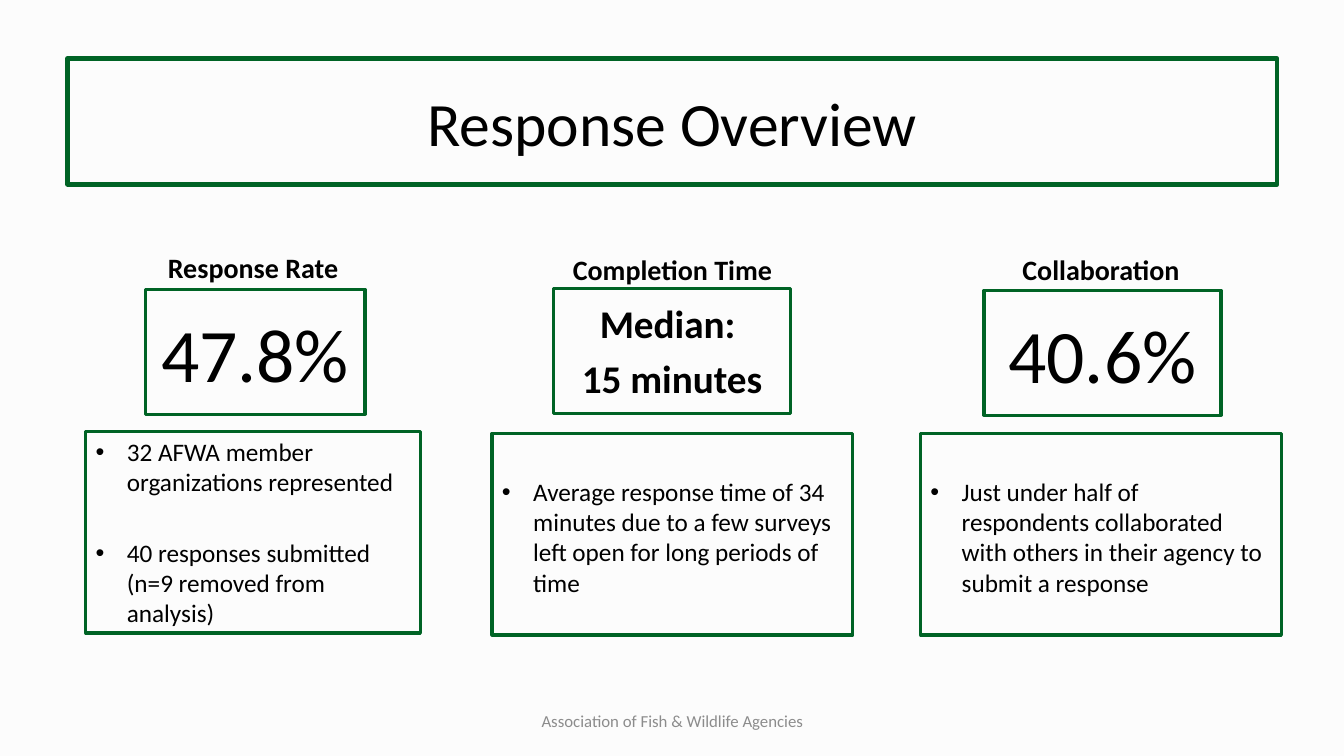
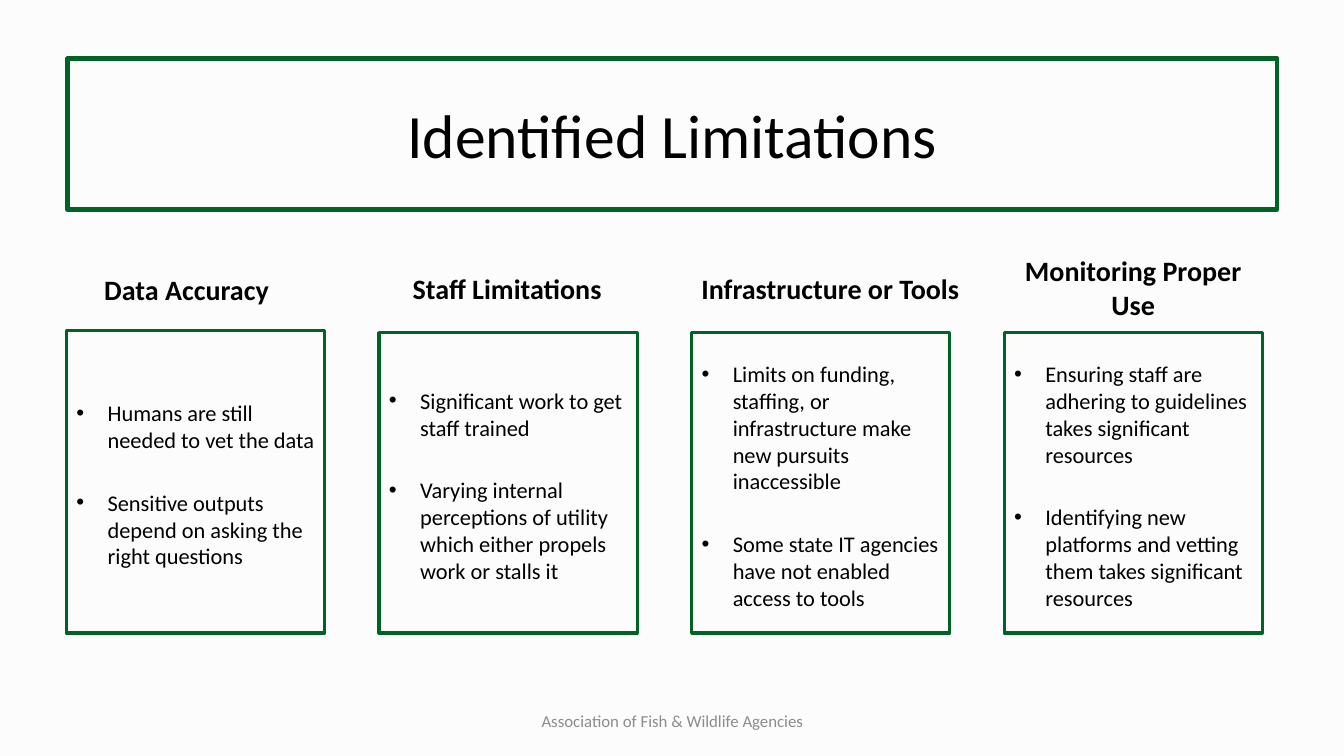
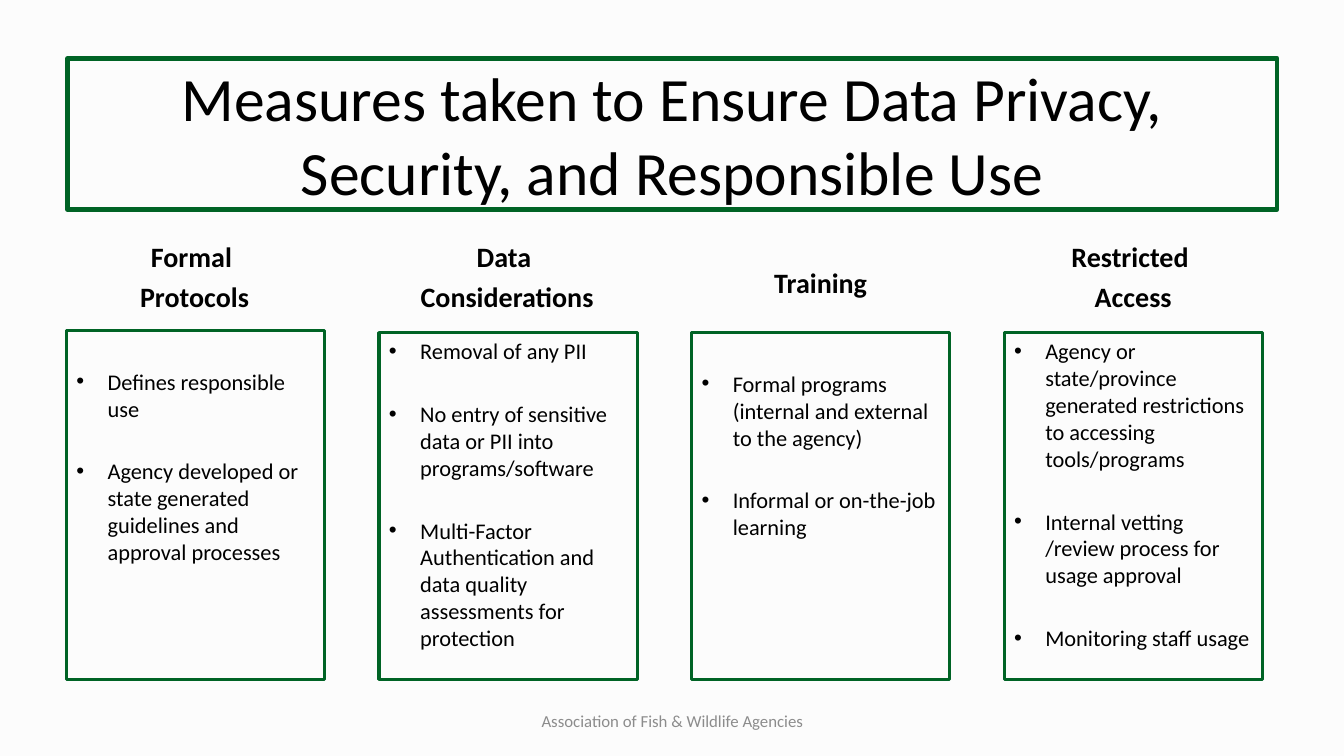
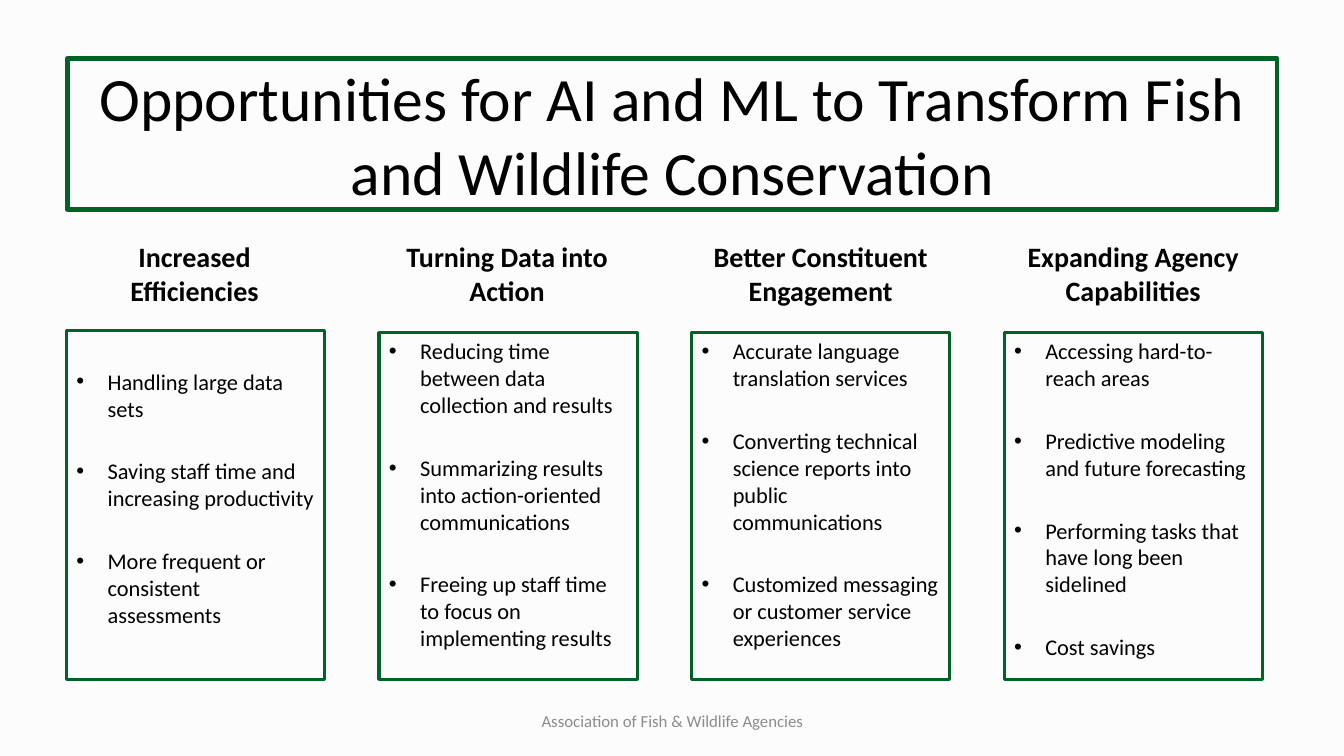
from dataclasses import dataclass

from lxml.etree import SubElement
from pptx import Presentation
from pptx.dml.color import RGBColor
from pptx.enum.shapes import MSO_SHAPE
from pptx.enum.text import MSO_ANCHOR, PP_ALIGN
from pptx.oxml.ns import qn
from pptx.util import Inches, Pt


@dataclass(frozen=True)
class Theme:
    font: str = "Calibri"
    paper: RGBColor = RGBColor(0xFC, 0xFC, 0xFC)
    green: RGBColor = RGBColor(0x00, 0x63, 0x25)
    ink: RGBColor = RGBColor(0, 0, 0)
    grey: RGBColor = RGBColor(0x8C, 0x8C, 0x8C)
    title: int = 44
    figure: int = 54
    median: int = 28
    heading: int = 20
    body_large: int = 18
    body: int = 16
    footer: int = 12


T = Theme()
FOOTER = "Association of Fish & Wildlife Agencies"
INDENT = 0.31
LEAD_IN = 0.37  # top inset that starts a list one line lower


def add_text(s, box, lines, size, color=T.ink, bold=False, border=None, bullets=False,
             anchor=MSO_ANCHOR.MIDDLE, top_inset=0.05):
    """Add a text box, or a green-bordered rectangle when border (points) is given."""
    at = [Inches(v) for v in box]
    if border:
        sp = s.shapes.add_shape(MSO_SHAPE.RECTANGLE, *at)
        sp.shadow.inherit = False
        sp.fill.background()
        sp.line.color.rgb = T.green
        sp.line.width = Pt(border)
    else:
        sp = s.shapes.add_textbox(*at)
    tf = sp.text_frame
    tf.word_wrap = True
    tf.vertical_anchor = anchor
    tf.margin_top = Inches(top_inset)
    for i, line in enumerate(lines):
        p = tf.paragraphs[0] if i == 0 else tf.add_paragraph()
        p.alignment = PP_ALIGN.LEFT if bullets else PP_ALIGN.CENTER
        if i:
            p.space_before = Pt(size * (1.6 if bullets else 0.2))
        if bullets:
            pPr = p._p.get_or_add_pPr()
            pPr.set("marL", str(Inches(INDENT)))
            pPr.set("indent", str(-Inches(INDENT)))
            SubElement(pPr, qn("a:buFont"), typeface="Arial")
            SubElement(pPr, qn("a:buChar"), char="•")
        r = p.add_run()
        r.text = line
        r.font.name = T.font
        r.font.size = Pt(size)
        r.font.bold = bold
        r.font.color.rgb = color


def add_base(prs, title, title_height):
    """Add a slide with the shared background, footer and title band."""
    s = prs.slides.add_slide(prs.slide_layouts[6])
    s.background.fill.solid()
    s.background.fill.fore_color.rgb = T.paper
    add_text(s, (4.56, 6.95, 4.22, 0.4), [FOOTER], T.footer, color=T.grey)
    add_text(s, (0.67, 0.58, 12, title_height), [title], T.title, border=3)
    return s


prs = Presentation()
prs.slide_width, prs.slide_height = Inches(13.33), Inches(7.5)

# Response overview: heading, key figure and list in each column
s = add_base(prs, "Response Overview", 1.25)
overview = [
    ("Response Rate", (1.42, 2.44, 2.18, 0.42),
     ["47.8%"], (1.44, 2.87, 2.18, 1.24), T.figure, False,
     ["32 AFWA member organizations represented",
      "40 responses submitted (n=9 removed from analysis)"], (0.85, 4.28, 3.32, 2), 0.05),
    ("Completion Time", (5.51, 2.46, 2.32, 0.42),
     ["Median: ", "15 minutes"], (5.49, 2.86, 2.35, 1.24), T.median, True,
     ["Average response time of 34 minutes due to a few surveys left open for long periods of time"],
     (4.88, 4.3, 3.58, 2), 0.1),
    ("Collaboration", (9.76, 2.46, 2.32, 0.42),
     ["40.6%"], (9.76, 2.88, 2.35, 1.24), T.figure, False,
     ["Just under half of respondents collaborated with others in their agency to submit a response"],
     (9.13, 4.3, 3.58, 2), 0.1),
]
for heading, heading_box, figure, figure_box, size, bold, points, list_box, inset in overview:
    add_text(s, heading_box, [heading], T.heading, bold=True, anchor=MSO_ANCHOR.TOP)
    add_text(s, figure_box, figure, size, bold=bold, border=2.25)
    add_text(s, list_box, points, T.body_large, border=2.25, bullets=True, top_inset=inset)

# Four-column slides: title, list bottom, list anchor, columns
# Column: heading lines, heading (left shift, top, width), list top inset, list points
COLUMN_LEFT, COLUMN_PITCH, COLUMN_WIDTH = 0.66, 3.1, 2.56
four_column_slides = [
    ("Identified Limitations", 6.28, MSO_ANCHOR.MIDDLE, [
        (["Data Accuracy"], (-0.17, 2.65, 2.72), 0.1,
         ["Humans are still needed to vet the data",
          "Sensitive outputs depend on asking the right questions"]),
        (["Staff Limitations"], (-0.09, 2.64, 2.72), 0.1,
         ["Significant work to get staff trained",
          "Varying internal perceptions of utility which either propels work or stalls it"]),
        (["Infrastructure or Tools"], (-0.04, 2.64, 2.83), 0.1,
         ["Limits on funding, staffing, or infrastructure make new pursuits inaccessible",
          "Some state IT agencies have not enabled access to tools"]),
        (["Monitoring Proper Use"], (0, 2.47, 2.56), 0.1,
         ["Ensuring staff are adhering to guidelines takes significant resources",
          "Identifying new platforms and vetting them takes significant resources"]),
    ]),
    ("Measures taken to Ensure Data Privacy, Security, and Responsible Use", 6.74, MSO_ANCHOR.TOP, [
        (["Formal ", "Protocols"], (0, 2.33, 2.54), LEAD_IN,
         ["Defines responsible use",
          "Agency developed or state generated guidelines and approval processes"]),
        (["Data ", "Considerations"], (0, 2.33, 2.54), 0.05,
         ["Removal of any PII",
          "No entry of sensitive data or PII into programs/software",
          "Multi-Factor Authentication and data quality assessments for protection"]),
        (["Training"], (0, 2.58, 2.56), LEAD_IN,
         ["Formal programs (internal and external to the agency)",
          "Informal or on-the-job learning"]),
        (["Restricted ", "Access"], (0, 2.33, 2.56), 0.05,
         ["Agency or state/province generated restrictions to accessing tools/programs",
          "Internal vetting /review process for usage approval",
          "Monitoring staff usage"]),
    ]),
    ("Opportunities for AI and ML to Transform Fish and Wildlife Conservation", 6.74, MSO_ANCHOR.TOP, [
        (["Increased Efficiencies"], (0, 2.33, 2.54), LEAD_IN,
         ["Handling large data sets",
          "Saving staff time and increasing productivity",
          "More frequent or consistent assessments"]),
        (["Turning Data into Action"], (0, 2.33, 2.54), 0.05,
         ["Reducing time between data collection and results",
          "Summarizing results into action-oriented communications",
          "Freeing up staff time to focus on implementing results"]),
        (["Better Constituent Engagement"], (0, 2.33, 2.56), 0.05,
         ["Accurate language translation services",
          "Converting technical science reports into public communications",
          "Customized messaging or customer service experiences"]),
        (["Expanding Agency Capabilities"], (0, 2.33, 2.56), 0.05,
         ["Accessing hard-to-reach areas",
          "Predictive modeling and future forecasting",
          "Performing tasks that have long been sidelined",
          "Cost savings"]),
    ]),
]
for title, bottom, anchor, columns in four_column_slides:
    s = add_base(prs, title, 1.5)
    for i, (heading, (shift, heading_top, heading_width), inset, points) in enumerate(columns):
        left = COLUMN_LEFT + i * COLUMN_PITCH
        top = 3.3 if i else 3.28
        add_text(s, (left + shift, heading_top, heading_width, 0.42), heading, T.heading,
                 bold=True, anchor=MSO_ANCHOR.TOP)
        add_text(s, (left, top, COLUMN_WIDTH, bottom - top), points, T.body, border=2.25,
                 bullets=True, anchor=anchor, top_inset=inset)

prs.save("out.pptx")
